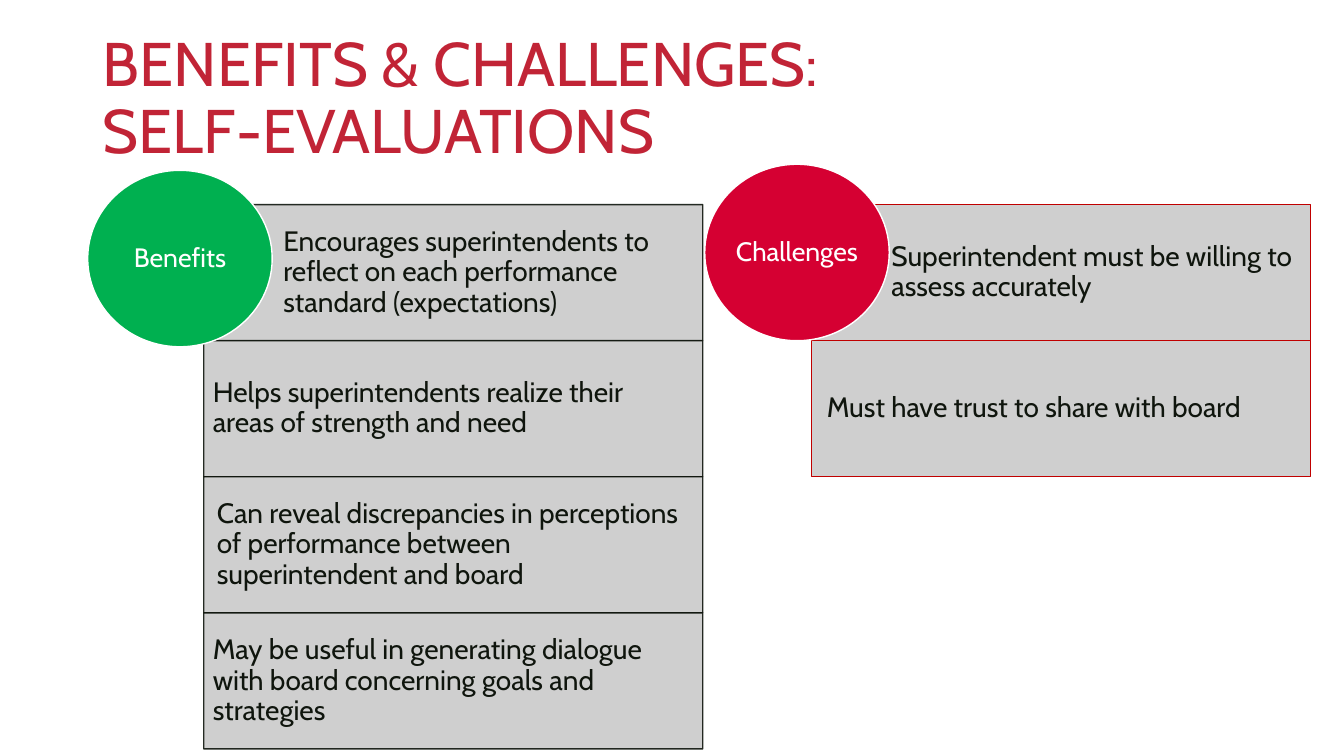
from lxml import etree
from pptx import Presentation
from pptx.dml.color import RGBColor
from pptx.enum import shapes, text
from pptx.oxml.ns import qn
from pptx.util import Inches, Pt

TITLE_RED = RGBColor(0xC1, 0x24, 0x36)
INK = RGBColor(0x0F, 0x15, 0x0D)
GREY = RGBColor(0xCA, 0xCA, 0xCA)
GREEN = RGBColor(0x00, 0xB0, 0x50)
CRIMSON = RGBColor(0xD5, 0x00, 0x32)
DARK_RED = RGBColor(0xC0, 0x00, 0x00)
WHITE = RGBColor(0xFF, 0xFF, 0xFF)
FONT = "Cabin"

BOX_WIDTH, BOX_HEIGHT = 4.95, 1.35
CIRCLE_WIDTH, CIRCLE_HEIGHT = 1.83, 1.75
BENEFITS = [
    ("Encourages superintendents to reflect on each performance standard (expectations)", 0.79),
    ("Helps superintendents realize their areas of strength and need", 0.09),
    ("Can reveal discrepancies in perceptions of performance between superintendent and board", 0.13),
    ("May be useful in generating dialogue with board concerning goals and strategies", 0.09),
]
CHALLENGES = [
    ("Superintendent must be willing to assess accurately", 0.79),
    ("Must have trust to share with board", 0.15),
]


def set_opacity(color_format_parent, percent):
    """Make the solid colour under an element partly transparent."""
    color = color_format_parent.find(qn("a:solidFill"))[0]
    etree.SubElement(color, qn("a:alpha")).set("val", str(percent * 1000))


def write(shape, words, size, color, alignment, insets):
    """Fill a shape with one middle-anchored paragraph."""
    frame = shape.text_frame
    frame.text = words
    frame.word_wrap = True
    frame.auto_size = text.MSO_AUTO_SIZE.NONE
    frame.vertical_anchor = text.MSO_ANCHOR.MIDDLE
    frame.margin_left, frame.margin_top, frame.margin_right, frame.margin_bottom = map(Inches, insets)
    paragraph = frame.paragraphs[0]
    paragraph.alignment = alignment
    paragraph.line_spacing = 0.9
    for run in paragraph.runs:
        run.font.name = FONT
        run.font.size = Pt(size)
        run.font.color.rgb = color


def add_outlined(slide, kind, box, fill, line):
    """Add a filled preset shape with a one-point outline."""
    shape = slide.shapes.add_shape(kind, *map(Inches, box))
    shape.shadow.inherit = False
    shape.fill.solid()
    shape.fill.fore_color.rgb = fill
    shape.line.color.rgb = line
    shape.line.width = Pt(1)
    return shape


def add_title(slide, left, top, width, height):
    """Place the slide title in the given box."""
    title = slide.shapes.title
    title.left, title.top, title.width, title.height = map(Inches, (left, top, width, height))
    write(title, "BENEFITS & CHALLENGES: \vSELF-EVALUATIONS", 44, TITLE_RED,
          text.PP_ALIGN.LEFT, (0.1, 0.05, 0.1, 0.05))


def add_stack(slide, left, top, points, line, line_opacity):
    """Stack one grey box per point downwards from a corner."""
    for row, (words, indent) in enumerate(points):
        box = (left, top + row * BOX_HEIGHT, BOX_WIDTH, BOX_HEIGHT)
        shape = add_outlined(slide, shapes.MSO_SHAPE.RECTANGLE, box, GREY, line)
        set_opacity(shape.element.spPr, 90)
        if line_opacity < 100:
            set_opacity(shape.element.spPr.find(qn("a:ln")), line_opacity)
        write(shape, words, 20, INK, text.PP_ALIGN.LEFT, (indent, 0.16, 0.16, 0.16))


def add_circle(slide, left, top, label, fill):
    """Add the labelled circle that heads a stack."""
    box = (left, top, CIRCLE_WIDTH, CIRCLE_HEIGHT)
    circle = add_outlined(slide, shapes.MSO_SHAPE.OVAL, box, fill, WHITE)
    write(circle, label, 19, WHITE, text.PP_ALIGN.CENTER, (0, 0, 0, 0))


def main():
    """Build the slide and save it."""
    presentation = Presentation()
    presentation.slide_width = Inches(13.33)
    presentation.slide_height = Inches(7.5)
    slide = presentation.slides.add_slide(presentation.slide_layouts[5])
    add_title(slide, 0.92, 0.27, 12.41, 1.45)
    add_stack(slide, 2.02, 2.03, BENEFITS, INK, 90)
    add_circle(slide, 0.87, 1.69, "Benefits", GREEN)
    add_stack(slide, 8.05, 2.03, CHALLENGES, DARK_RED, 100)
    add_circle(slide, 6.99, 1.63, "Challenges", CRIMSON)
    presentation.save("out.pptx")


if __name__ == "__main__":
    main()
